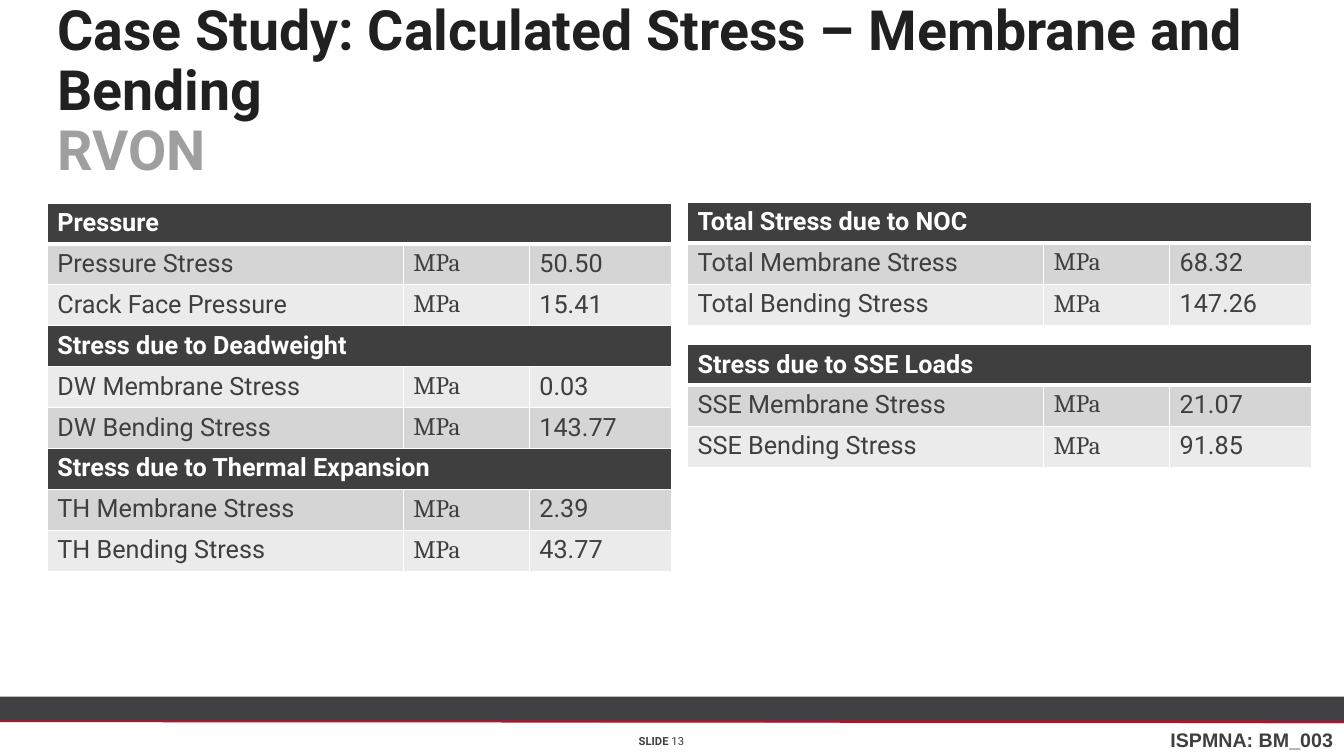
"""Build the slide of calculated membrane and bending stresses for RVON."""
from lxml.etree import SubElement
from pptx import Presentation
from pptx.dml.color import RGBColor
from pptx.enum.shapes import MSO_CONNECTOR, MSO_SHAPE
from pptx.enum.text import MSO_ANCHOR, PP_ALIGN
from pptx.oxml.ns import qn
from pptx.util import Inches, Pt

DARK, WHITE, GREY, RED = "3F3F3F", "FFFFFF", "414042", "981E32"
BANDS = ["ECEBEB", "D6D5D5"]
HEADER_HEIGHT = Inches(0.39)


def color(hex_value):
    return RGBColor.from_string(hex_value)


def add_run(paragraph, text, hex_value, **formats):
    run = paragraph.add_run()
    run.text = text
    run.font.color.rgb = color(hex_value)
    for name, value in formats.items():
        setattr(run.font, name, value)


prs = Presentation()
prs.slide_width, prs.slide_height = Inches(13.33), Inches(7.5)
slide = prs.slides.add_slide(prs.slide_layouts[6])
shapes = slide.shapes

footer_bar = shapes.add_shape(
    MSO_SHAPE.RECTANGLE, 0, Inches(6.91), Inches(13.33), Inches(0.25))
footer_bar.shadow.inherit = False
footer_bar.fill.solid()
footer_bar.fill.fore_color.rgb = color(GREY)
footer_bar.line.fill.background()

for x1, y1, x2, y2, hex_value in [(0, 7.14, 13.33, 7.16, GREY),
                                  (-0.01, 7.15, 13.32, 7.16, RED)]:
    footer_rule = shapes.add_connector(
        MSO_CONNECTOR.STRAIGHT, Inches(x1), Inches(y1), Inches(x2), Inches(y2))
    footer_rule.line.color.rgb = color(hex_value)
    footer_rule.line.width = Pt(2)
    SubElement(footer_rule._element.spPr, qn("a:effectLst"))

document_code = shapes.add_textbox(
    Inches(11.51), Inches(7.17), Inches(1.83), Inches(0.34)).text_frame
document_code.word_wrap = False
add_run(document_code.paragraphs[0], "ISPMNA: BM_003", DARK,
        name="Arial", size=Pt(14), bold=True)

title = shapes.add_textbox(
    Inches(0.47), Inches(0.15), Inches(12.45), Inches(1.53)).text_frame
title.word_wrap = True
title.vertical_anchor = MSO_ANCHOR.MIDDLE
heading = title.paragraphs[0]
heading.line_spacing = 0.9
title_font = {"name": "Roboto", "size": Pt(39.6), "bold": True}
add_run(heading, "Case Study: Calculated Stress – Membrane and Bending",
        "202020", **title_font)
heading.add_line_break()
add_run(heading, "RVON", "9F9F9F", **title_font)

slide_number = shapes.add_textbox(
    Inches(6.1), Inches(7.24), Inches(0.92), Inches(0.22)).text_frame
slide_number.word_wrap = True
number_line = slide_number.paragraphs[0]
number_line.alignment = PP_ALIGN.CENTER
for text, bold in [("SLIDE ", True), ("13", False)]:
    add_run(number_line, text, DARK, name="Roboto", size=Pt(8), bold=bold)

stress_tables = [
    (0.47, 2.02, 3.64, [
        ("Pressure",),
        ("Pressure Stress", "50.50"),
        ("Crack Face Pressure", "15.41"),
        ("Stress due to Deadweight",),
        ("DW Membrane Stress", "0.03"),
        ("DW Bending Stress", "143.77"),
        ("Stress due to Thermal Expansion",),
        ("TH Membrane Stress", "2.39"),
        ("TH Bending Stress", "43.77")]),
    (6.82, 2.01, 1.21, [
        ("Total Stress due to NOC",),
        ("Total Membrane Stress", "68.32"),
        ("Total Bending Stress", "147.26")]),
    (6.82, 3.42, 1.21, [
        ("Stress due to SSE Loads",),
        ("SSE Membrane Stress", "21.07"),
        ("SSE Bending Stress", "91.85")]),
]

for left, top, height, stresses in stress_tables:
    table = shapes.add_table(len(stresses), 3, Inches(left), Inches(top),
                             Inches(6.2), Inches(height)).table
    for column, width in zip(table.columns, [3.53, 1.25, 1.41]):
        column.width = Inches(width)
    body_height = (Inches(height) - HEADER_HEIGHT) // (len(stresses) - 1)

    for row, (label, *values) in enumerate(stresses):
        table.rows[row].height = body_height if row else HEADER_HEIGHT
        is_header = not values
        if is_header:
            table.cell(row, 0).merge(table.cell(row, 2))
        texts = [label] if is_header else [label, "MPa", *values]

        for col in range(3):
            cell = table.cell(row, col)
            properties = cell._tc.get_or_add_tcPr()
            for side in ["L", "R", "T", "B"]:
                thick = (row, side) in [(0, "B"), (1, "T")]
                border = SubElement(properties, qn(f"a:ln{side}"),
                                    w=str(Pt(3 if thick else 1)))
                border_fill = SubElement(border, qn("a:solidFill"))
                SubElement(border_fill, qn("a:srgbClr"), val=WHITE)
            cell.fill.solid()
            cell.fill.fore_color.rgb = color(DARK if is_header else BANDS[row % 2])

        for col, text in enumerate(texts):
            add_run(table.cell(row, col).text_frame.paragraphs[0], text,
                    WHITE if is_header else DARK,
                    name="Cambria" if col == 1 else "Roboto",
                    size=Pt(18), bold=is_header)

prs.save("out.pptx")
